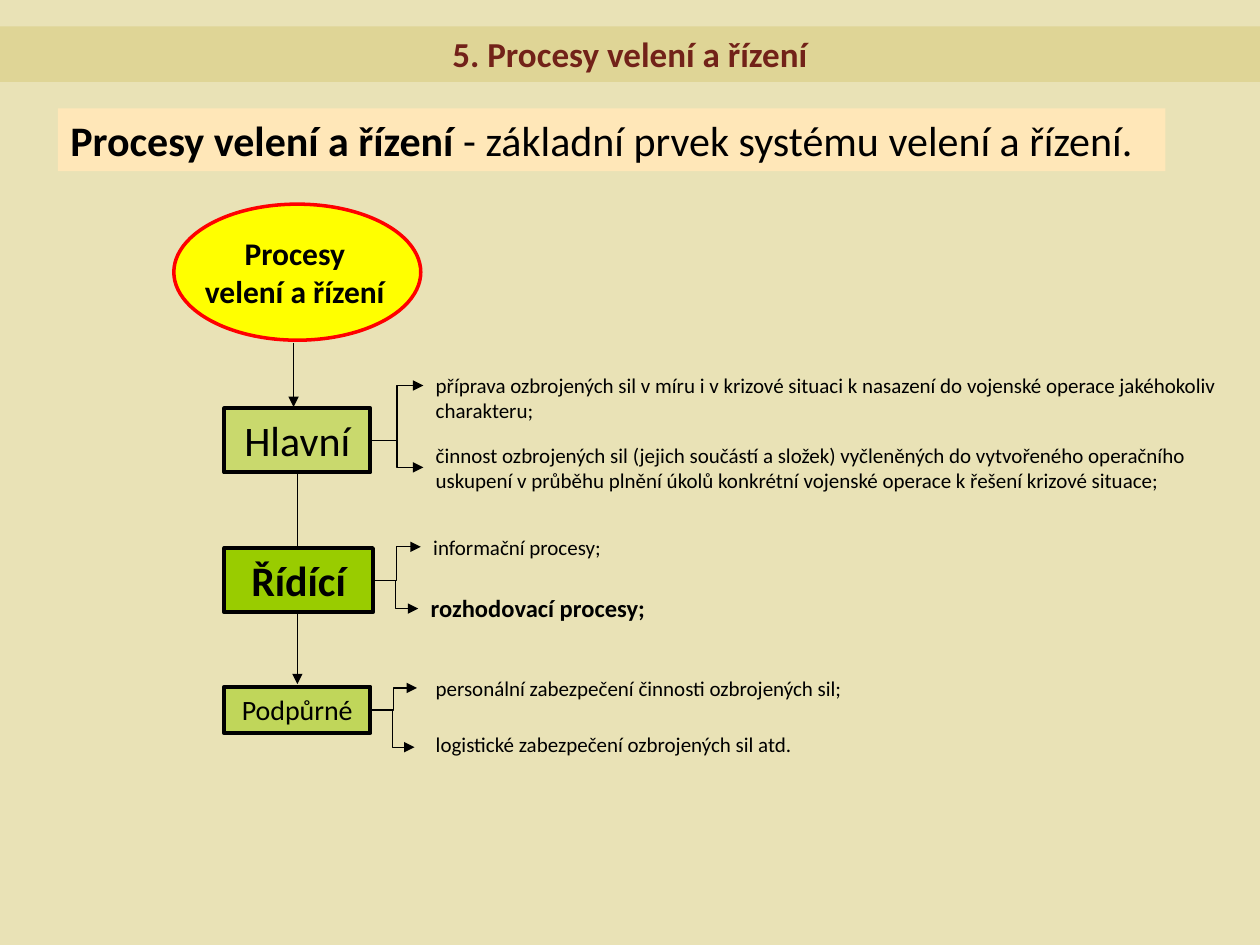
from lxml import etree
from pptx import Presentation
from pptx.dml.color import RGBColor
from pptx.enum.shapes import MSO_CONNECTOR as CONN, MSO_SHAPE as SHAPE
from pptx.enum.text import MSO_ANCHOR as ANCHOR, PP_ALIGN as ALIGN
from pptx.oxml.ns import qn
from pptx.util import Inches, Pt

COLORS = {
    "background": "E9E2B6",
    "title_bar": "DFD596",
    "title": "722219",
    "definition": "FFE7B8",
    "ellipse": "FFFF00",
    "ellipse_line": "FF0000",
    "box": "99CC00",
    "ink": "000000",
}


def rgb(name):
    return RGBColor.from_string(COLORS[name])


class SlideBuilder:
    font = "Calibri"

    def __init__(self, slide):
        self.slide = slide
        fill = slide.background.fill
        fill.solid()
        fill.fore_color.rgb = rgb("background")

    def add_runs(self, sp, runs, size, color="ink", align=ALIGN.LEFT, wrap=True):
        """Fill a shape with one paragraph of (text, bold) runs."""
        tf = sp.text_frame
        tf.word_wrap = wrap
        tf.vertical_anchor = ANCHOR.TOP
        p = tf.paragraphs[0]
        p.alignment = align
        for text, bold in runs:
            for i, line in enumerate(text.split("\n")):
                if i:
                    p.add_line_break()
                r = p.add_run()
                r.text = line
                r.font.name = self.font
                r.font.size = Pt(size)
                r.font.bold = bold
                r.font.color.rgb = rgb(color)

    def shape(self, kind, at, fill, line=None, width=2.25, opacity=100):
        sp = self.slide.shapes.add_shape(kind, *map(Inches, at))
        sp.shadow.inherit = False
        sp.fill.solid()
        sp.fill.fore_color.rgb = rgb(fill)
        if opacity < 100:
            color = sp._element.spPr.find(qn("a:solidFill")).find(qn("a:srgbClr"))
            etree.SubElement(color, qn("a:alpha"), val=str(opacity * 1000))
        if line:
            sp.line.color.rgb = rgb(line)
            sp.line.width = Pt(width)
        else:
            sp.line.fill.background()
        return sp

    def text(self, at, text, size=12, bold=False, align=ALIGN.LEFT):
        sp = self.slide.shapes.add_textbox(*map(Inches, at))
        self.add_runs(sp, [(text, bold)], size, align=align)

    def arrow(self, start, end, kind=CONN.STRAIGHT):
        sp = self.slide.shapes.add_connector(kind, *map(Inches, start + end))
        sp.line.color.rgb = rgb("ink")
        sp.line.width = Pt(0.75)
        spPr = sp._element.spPr
        etree.SubElement(spPr.find(qn("a:ln")), qn("a:tailEnd"), type="triangle")
        etree.SubElement(spPr, qn("a:effectLst"))


def main():
    prs = Presentation()
    prs.slide_width, prs.slide_height = Inches(10), Inches(7.5)
    s = SlideBuilder(prs.slides.add_slide(prs.slide_layouts[6]))

    # Title bar and definition
    bar = s.shape(SHAPE.RECTANGLE, (0, 0.21, 10, 0.44), "title_bar")
    s.add_runs(bar, [("5. Procesy velení a řízení", True)], 20, "title", ALIGN.CENTER)
    definition = s.shape(SHAPE.RECTANGLE, (0.46, 0.86, 8.79, 0.5), "definition")
    s.add_runs(definition, [("Procesy velení a řízení", True),
                            (" - základní prvek systému velení a řízení.", False)],
               24, wrap=False)

    # Root ellipse and the vertical arrows
    s.arrow((2.36, 3.75), (2.36, 5.43))
    s.shape(SHAPE.OVAL, (1.38, 1.62, 1.96, 1.08), "ellipse", "ellipse_line", 2)
    s.text((1.47, 1.81, 1.74, 0.71), "Procesy\nvelení a řízení", 18, True, ALIGN.CENTER)
    s.arrow((2.33, 2.72), (2.33, 3.23))

    # Process groups: label, top, width, height, size, bold, opacity, and
    # branches (text, left, top, width, height, size, bold, arrow tip)
    groups = [
        ("Hlavní", 3.24, 1.16, 0.51, 24, False, 40, [
            ("příprava ozbrojených sil v míru i v krizové situaci k nasazení "
             "do vojenské operace jakéhokoliv charakteru;",
             3.36, 2.91, 6.48, 0.3, 12, False, (3.36, 3.06)),
            ("činnost ozbrojených sil (jejich součástí a složek) vyčleněných "
             "do vytvořeného operačního uskupení v průběhu plnění úkolů "
             "konkrétní vojenské operace k řešení krizové situace;",
             3.36, 3.46, 6.48, 0.5, 12, False, (3.36, 3.71)),
        ]),
        ("Řídící", 4.35, 1.18, 0.51, 24, True, 100, [
            ("informační procesy;",
             3.34, 4.19, 2.07, 0.3, 12, False, (3.34, 4.34)),
            ("rozhodovací procesy;",
             3.32, 4.66, 4.35, 0.33, 14, True, (3.32, 4.83)),
        ]),
        ("Podpůrné", 5.45, 1.16, 0.37, 16, False, 50, [
            ("personální zabezpečení činnosti ozbrojených sil;",
             3.36, 5.31, 4.9, 0.3, 12, False, (3.31, 5.46)),
            ("logistické zabezpečení ozbrojených sil atd.",
             3.36, 5.76, 5.89, 0.3, 12, False, (3.29, 5.93)),
        ]),
    ]
    left = 1.78
    for label, top, width, height, size, bold, opacity, branches in groups:
        box = s.shape(SHAPE.RECTANGLE, (left, top, width, height), "box", "ink",
                      opacity=opacity)
        s.add_runs(box, [(label, bold)], size, align=ALIGN.CENTER)
        for text, x, y, w, h, text_size, text_bold, tip in branches:
            s.arrow((left + width, top + height / 2), tip, CONN.ELBOW)
            s.text((x, y, w, h), text, text_size, text_bold)

    prs.save("out.pptx")


if __name__ == "__main__":
    main()
